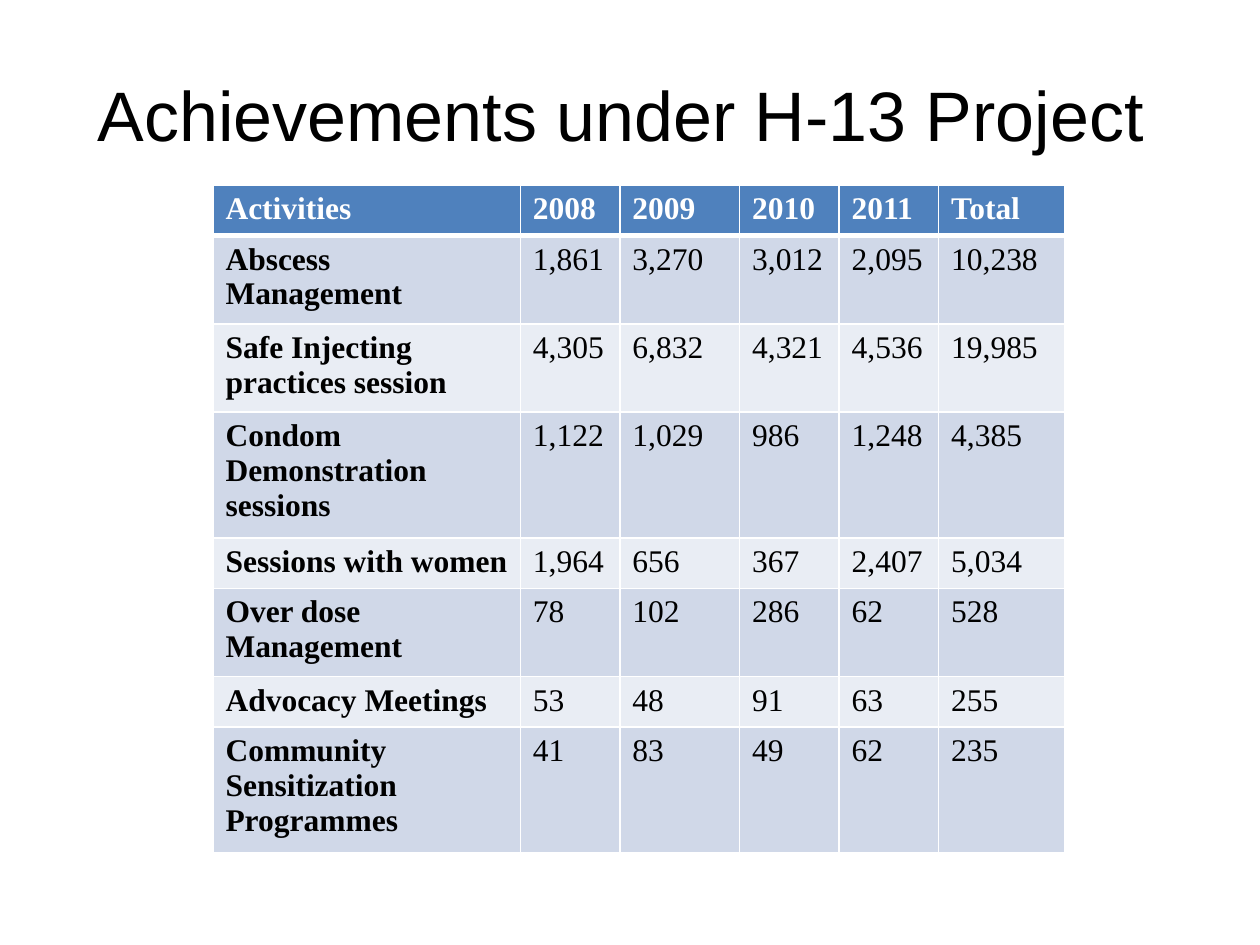
from lxml.etree import SubElement
from pptx import Presentation
from pptx.dml.color import RGBColor
from pptx.enum.text import MSO_ANCHOR as Anchor, PP_ALIGN as Align
from pptx.oxml.ns import qn
from pptx.util import Inches, Pt

TITLE = "Achievements under H-13 Project"
ROWS = [
    ("Activities", "2008", "2009", "2010", "2011", "Total"),
    ("Abscess Management", "1,861", "3,270", "3,012", "2,095", "10,238"),
    ("Safe Injecting practices session", "4,305", "6,832", "4,321", "4,536", "19,985"),
    ("Condom Demonstration sessions", "1,122", "1,029", "986", "1,248", "4,385"),
    ("Sessions with women", "1,964", "656", "367", "2,407", "5,034"),
    ("Over dose Management", "78", "102", "286", "62", "528"),
    ("Advocacy Meetings", "53", "48", "91", "63", "255"),
    ("Community Sensitization Programmes", "41", "83", "49", "62", "235"),
]
COLUMN_WIDTHS = [2.44, 0.79, 0.95, 0.79, 0.79, 1]
ROW_HEIGHTS = [0.4, 0.7, 0.7, 1, 0.4, 0.7, 0.4, 1]

WHITE, BLACK = "FFFFFF", "000000"
HEADER_FILL = "4F81BD"
BAND_FILLS = ["E9EDF4", "D0D8E8"]  # even rows, odd rows

TITLE_FONT = {"name": "Arial", "size": Pt(40), "bold": False}
CELL_FONT = {"name": "Times New Roman", "size": Pt(18)}


def color(hex_value):
    return RGBColor.from_string(hex_value)


def write_text(text_frame, text, font_format, font_color):
    paragraph = text_frame.paragraphs[0]
    run = paragraph.add_run()
    run.text = text
    for name, value in font_format.items():
        setattr(run.font, name, value)
    run.font.color.rgb = color(font_color)
    return paragraph


def add_title(slide):
    title = slide.shapes.title
    place = {"left": 0.55, "top": 0.55, "width": 8.75, "height": 0.7}
    for name, value in place.items():
        setattr(title, name, Inches(value))
    title.text_frame.vertical_anchor = Anchor.MIDDLE
    paragraph = write_text(title.text_frame, TITLE, TITLE_FONT, BLACK)
    paragraph.alignment = Align.CENTER


def set_borders(cell, widths):
    properties = cell._tc.get_or_add_tcPr()
    for side, width in widths.items():
        line = SubElement(properties, qn(f"a:ln{side}"), w=str(Pt(width)))
        fill = SubElement(line, qn("a:solidFill"))
        SubElement(fill, qn("a:srgbClr"), val=WHITE)


def format_cell(cell, text, row, column):
    is_header = row == 0
    # Thick rule between the header and the first row
    set_borders(cell, {"L": 1, "R": 1, "T": 3 if row == 1 else 1, "B": 3 if is_header else 1})
    cell.fill.solid()
    cell.fill.fore_color.rgb = color(HEADER_FILL if is_header else BAND_FILLS[row % 2])
    font_format = CELL_FONT | {"bold": is_header or column == 0}
    write_text(cell.text_frame, text, font_format, WHITE if is_header else BLACK)


def add_activity_table(slide):
    frame = slide.shapes.add_table(
        len(ROWS), len(COLUMN_WIDTHS), Inches(1.69), Inches(1.47),
        Inches(sum(COLUMN_WIDTHS)), Inches(sum(ROW_HEIGHTS)))
    table = frame.table
    for column, width in zip(table.columns, COLUMN_WIDTHS):
        column.width = Inches(width)
    for row, height in zip(table.rows, ROW_HEIGHTS):
        row.height = Inches(height)
    for row, texts in enumerate(ROWS):
        for column, text in enumerate(texts):
            format_cell(table.cell(row, column), text, row, column)


def main():
    presentation = Presentation()
    presentation.slide_width = Inches(10)
    presentation.slide_height = Inches(7.5)
    slide = presentation.slides.add_slide(presentation.slide_layouts[5])  # title only
    add_title(slide)
    add_activity_table(slide)
    presentation.save("out.pptx")


if __name__ == "__main__":
    main()
